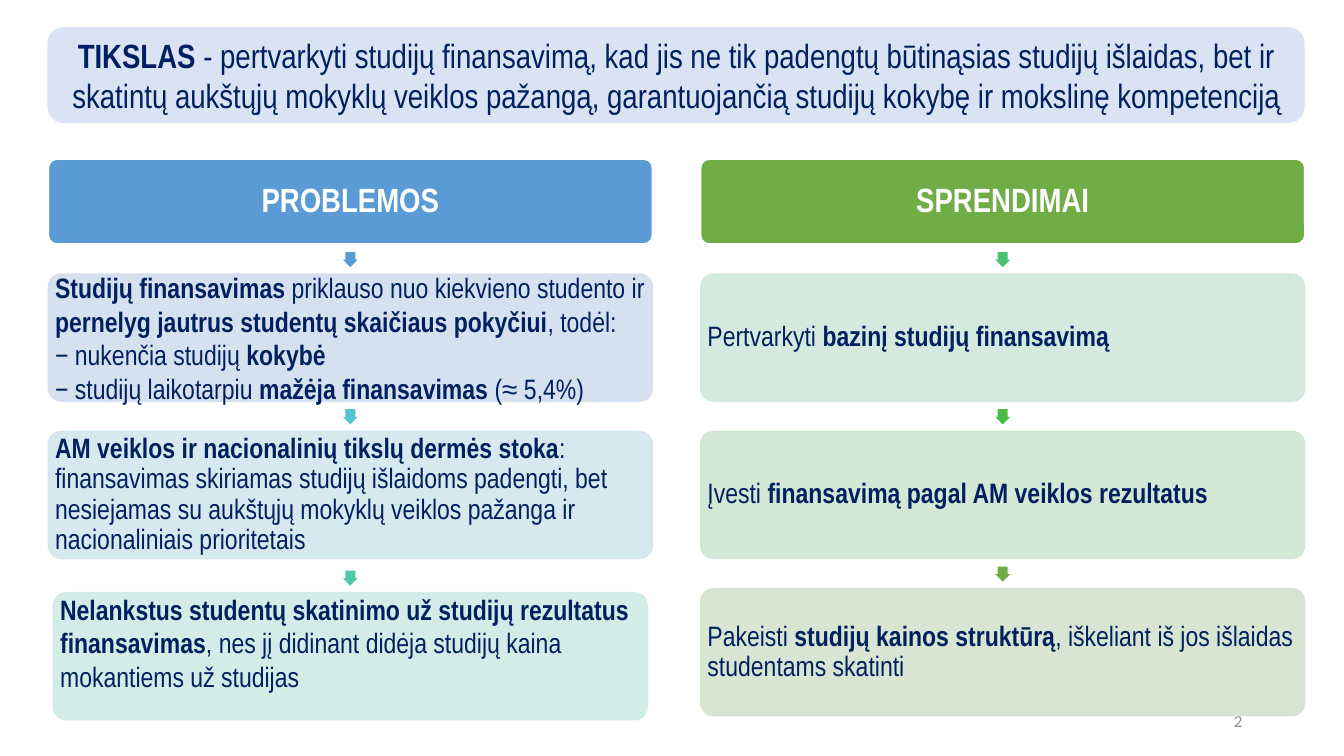
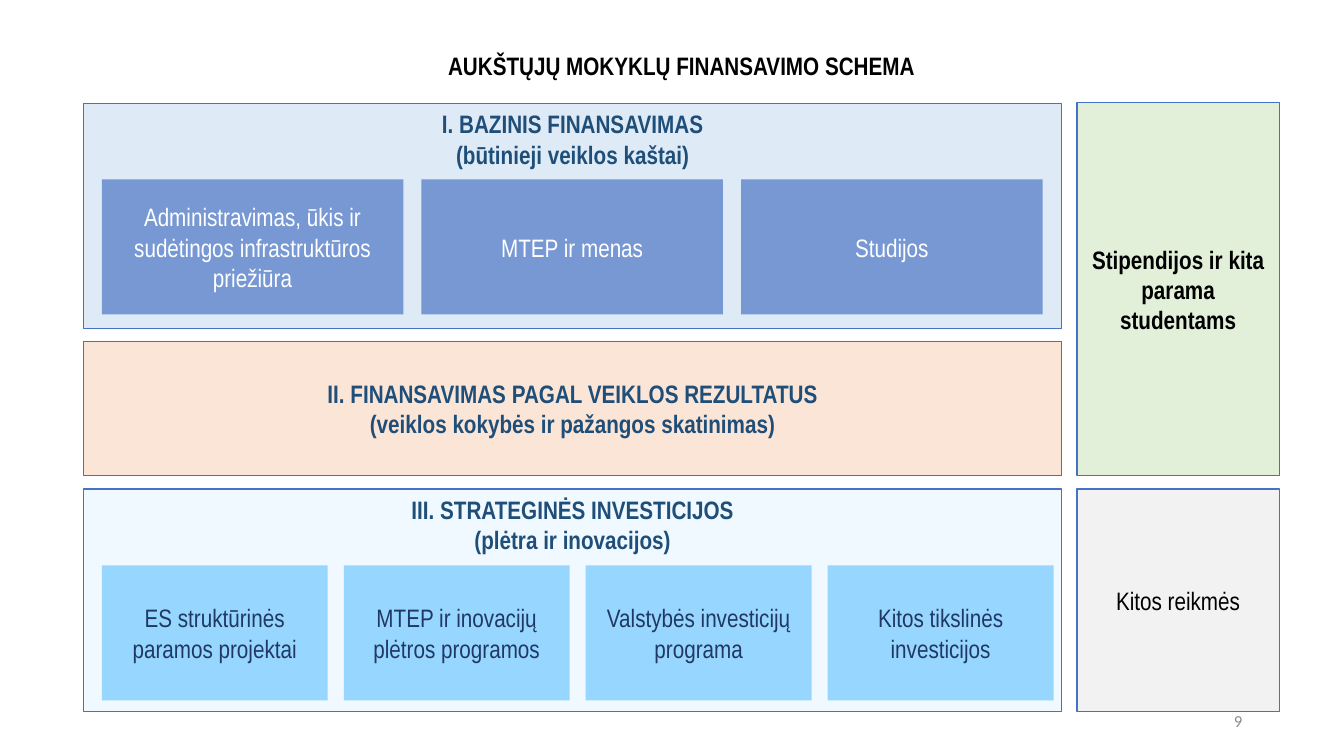
import pptx
import pptx.dml.color
import pptx.enum.shapes
import pptx.enum.text
import pptx.oxml
import pptx.oxml.ns
import pptx.util

Inches = pptx.util.Inches
Shape = pptx.enum.shapes.MSO_SHAPE
Align = pptx.enum.text.PP_ALIGN
Anchor = pptx.enum.text.MSO_ANCHOR

NAVY = "002060"
WHITE = "FFFFFF"
BLACK = "000000"
OUTLINE = "4472C4"
HEADING = "1F4E79"


def rgb(hex_color):
    return pptx.dml.color.RGBColor.from_string(hex_color)


class Deck:
    """Holds the shared style and the slide being built."""

    font_name = "Arial Narrow"

    def __init__(self):
        self.presentation = pptx.Presentation()
        self.presentation.slide_width = Inches(13.33)
        self.presentation.slide_height = Inches(7.5)
        self.slide = None

    def new_slide(self, number):
        self.slide = self.presentation.slides.add_slide(self.presentation.slide_layouts[6])
        self.label(9.42, 6.95, 3, 0.4, str(number), size=12, color="8C8C8C",
                   align=Align.RIGHT, font_name="Calibri")

    def set_text(self, shape, lines, size=18, color=BLACK, bold=False, align=Align.CENTER,
                 anchor=Anchor.MIDDLE, spacing=None, font_name=None):
        """Fill a shape with one paragraph a line; *asterisks* mark bold words."""
        frame = shape.text_frame
        frame.word_wrap = True
        frame.vertical_anchor = anchor
        for index, line in enumerate(lines.split("\n")):
            paragraph = frame.add_paragraph() if index else frame.paragraphs[0]
            paragraph.alignment = align
            paragraph.line_spacing = spacing
            paragraph.font.name = font_name or self.font_name
            paragraph.font.size = pptx.util.Pt(size)
            paragraph.font.color.rgb = rgb(color)
            paragraph.font.bold = bold
            for part, text in enumerate(line.split("*")):
                if text:
                    run = paragraph.add_run()
                    run.text = text
                    if part % 2:
                        run.font.bold = True

    def label(self, left, top, width, height, text, **style):
        shape = self.slide.shapes.add_textbox(Inches(left), Inches(top), Inches(width), Inches(height))
        self.set_text(shape, text, **style)

    def box(self, left, top, width, height, fill, text="", line=None, kind=Shape.RECTANGLE, **style):
        shape = self.slide.shapes.add_shape(
            kind, Inches(left), Inches(top), Inches(width), Inches(height))
        shape.shadow.inherit = False
        shape.fill.solid()
        shape.fill.fore_color.rgb = rgb(fill)
        if line:
            shape.line.color.rgb = rgb(line)
            shape.line.width = pptx.util.Pt(1)
        else:
            shape.line.fill.background()
        if text:
            self.set_text(shape, text, **style)
        return shape

    def card(self, left, top, width, height, fill, text, line, bottom=0.03, **style):
        """Rounded box with narrow text margins."""
        shape = self.box(left, top, width, height, fill, text, line, Shape.ROUNDED_RECTANGLE, **style)
        shape.adjustments[0] = 0.1
        frame = shape.text_frame
        frame.margin_left = frame.margin_right = frame.margin_top = Inches(0.03)
        frame.margin_bottom = Inches(bottom)
        return shape

    def pale_card(self, left, top, width, height, fill, text, **style):
        shape = self.card(left, top, width, height, fill, text, fill,
                          size=20, color=NAVY, align=Align.LEFT, **style)
        for color in shape._element.spPr.iter(pptx.oxml.ns.qn("a:srgbClr")):
            alpha = pptx.oxml.parse_xml("<a:alpha %s val='90000'/>" % pptx.oxml.ns.nsdecls("a"))
            color.append(alpha)

    def arrow(self, center, top, fill):
        size = 0.15
        shape = self.box(center - size / 2, top, size, size, fill, kind=Shape.DOWN_ARROW)
        shape.adjustments[0] = 0.667

    def column(self, left, title, title_fill, steps, last_inset=0, last_drop=0):
        """Header above a chain of cards; the last card may be narrower and lower."""
        width, row_step = 5.99, 1.56
        self.card(left, 1.58, width, 0.84, title_fill, title, WHITE,
                  size=24, color=WHITE, bold=True, spacing=0.9)
        for row, (arrow_fill, card_fill, text, style) in enumerate(steps):
            last = row == len(steps) - 1
            inset, drop = (last_inset, last_drop) if last else (0, 0)
            offset = row * row_step + drop
            self.arrow(left + width / 2, 2.5 + offset, arrow_fill)
            self.pale_card(left + inset, 2.72 + offset, width - 2 * inset, 1.26,
                           card_fill, text, **style)

    def row(self, top, width, step, fill, color, texts):
        for index, text in enumerate(texts):
            self.box(1.01 + index * step, top, width, 1.34, fill, text, color=color)


def build_goal_slide(deck):
    deck.new_slide(2)
    tight = {"spacing": 0.9}
    deck.column(0.48, "PROBLEMOS", "5B9BD5", [
        ("5B9BD5", "D2DEEF",
         "*Studijų finansavimas* priklauso nuo kiekvieno studento ir "
         "*pernelyg jautrus studentų skaičiaus pokyčiui*, todėl:\n"
         "− nukenčia studijų *kokybė*\n"
         "− studijų laikotarpiu *mažėja finansavimas* (≈ 5,4%)", {}),
        ("55C3CF", "D1E7ED",
         "*AM veiklos ir nacionalinių tikslų dermės stoka*: finansavimas skiriamas studijų "
         "išlaidoms padengti, bet nesiejamas su aukštųjų mokyklų veiklos pažanga ir "
         "nacionaliniais prioritetais", tight),
        ("50C8A7", "D0EBE6",
         "*Nelankstus studentų skatinimo už studijų rezultatus finansavimas*, nes jį didinant "
         "didėja studijų kaina mokantiems už studijas", {"bottom": 0.3}),
    ], last_inset=0.05, last_drop=0.04)
    deck.column(6.95, "SPRENDIMAI", "70AD47", [
        ("4BC174", "D0E8DB", "Pertvarkyti *bazinį studijų finansavimą*", tight),
        ("4ABA46", "CFE6D1", "Įvesti *finansavimą pagal AM veiklos rezultatus*", tight),
        ("70AD47", "D5E3CF",
         "Pakeisti *studijų kainos struktūrą*, iškeliant iš jos išlaidas studentams skatinti", tight),
    ])
    deck.box(0.47, 0.27, 12.47, 0.95, "DAE3F3",
             "*TIKSLAS* - pertvarkyti studijų finansavimą, kad jis ne tik padengtų būtinąsias "
             "studijų išlaidas, bet ir skatintų aukštųjų mokyklų veiklos pažangą, "
             "garantuojančią studijų kokybę ir mokslinę kompetenciją",
             kind=Shape.ROUNDED_RECTANGLE, size=24, color=NAVY)


def build_scheme_slide(deck):
    deck.new_slide(9)
    deck.label(0.83, 0.36, 11.86, 0.57, "AUKŠTŲJŲ MOKYKLŲ FINANSAVIMO SCHEMA", bold=True)
    for top, height, fill, anchor, text in [
        (1.03, 2.23, "DEEBF7", Anchor.TOP, "I. BAZINIS FINANSAVIMAS\n(būtinieji veiklos kaštai)"),
        (3.39, 1.33, "FBE5D6", Anchor.MIDDLE,
         "II. FINANSAVIMAS PAGAL VEIKLOS REZULTATUS\n(veiklos kokybės ir pažangos skatinimas)"),
        (4.85, 2.21, "EFF9FF", Anchor.TOP, "III. STRATEGINĖS INVESTICIJOS\n(plėtra ir inovacijos)"),
    ]:
        deck.box(0.83, top, 9.7, height, fill, text, OUTLINE, color=HEADING, bold=True, anchor=anchor)
    deck.box(10.68, 1.02, 2.01, 3.7, "E2F0D9", "Stipendijos ir kita parama\nstudentams",
             OUTLINE, bold=True)
    deck.box(10.68, 4.85, 2.01, 2.21, "F2F2F2", "Kitos reikmės", OUTLINE)
    deck.row(1.78, 2.99, 3.17, "7798D3", WHITE, [
        "Administravimas, ūkis ir sudėtingos infrastruktūros priežiūra",
        "MTEP ir menas",
        "Studijos",
    ])
    deck.row(5.61, 2.24, 2.4, "97D7FF", "203864", [
        "ES struktūrinės paramos projektai",
        "MTEP ir inovacijų plėtros programos",
        "Valstybės investicijų programa",
        "Kitos tikslinės investicijos",
    ])


def main():
    deck = Deck()
    build_goal_slide(deck)
    build_scheme_slide(deck)
    deck.presentation.save("out.pptx")


if __name__ == "__main__":
    main()
